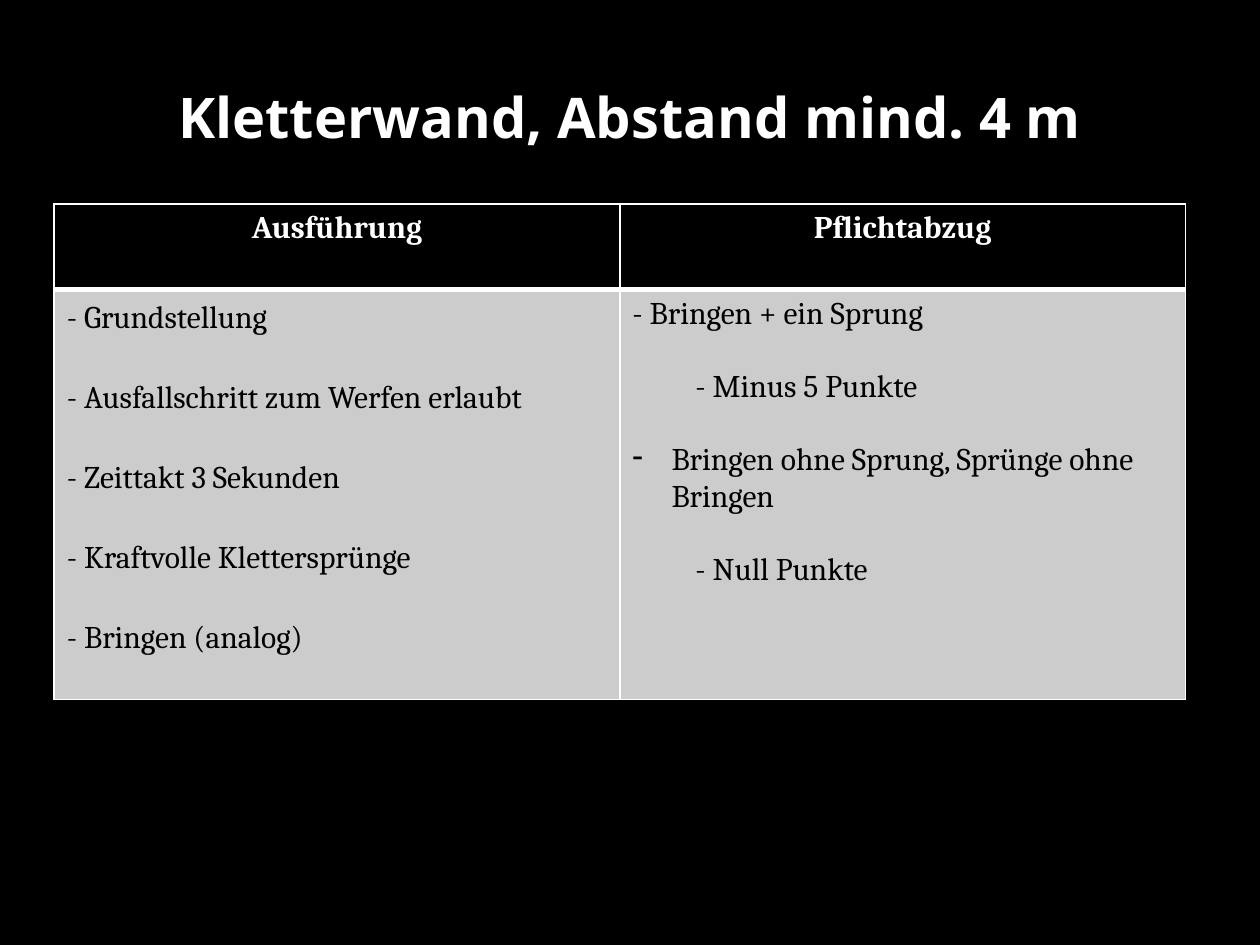
"""Build the climbing wall slide with its two-column rules table."""
from lxml import etree
from pptx import Presentation, util as u
from pptx.dml.color import RGBColor
from pptx.enum import text
from pptx.oxml.ns import qn

BLACK = RGBColor(0, 0, 0)
WHITE = RGBColor(255, 255, 255)
GREY = RGBColor(0xCC, 0xCC, 0xCC)

TITLE = "Kletterwand, Abstand mind. 4 m"
PLAIN, INDENTED, BULLET = (0, 0), (0.5, 0), (0.31, -0.31)
COLUMNS = [
    {"heading": "Ausführung", "line_spacing": 1.1, "gap": 23, "items": [
        ("- Grundstellung", PLAIN),
        ("- Ausfallschritt zum Werfen erlaubt", PLAIN),
        ("- Zeittakt 3 Sekunden", PLAIN),
        ("- Kraftvolle Klettersprünge", PLAIN),
        ("- Bringen (analog)", PLAIN)]},
    {"heading": "Pflichtabzug", "line_spacing": 1.0, "gap": 21, "items": [
        ("- Bringen + ein Sprung", PLAIN),
        ("- Minus 5 Punkte", INDENTED),
        ("Bringen ohne Sprung, Sprünge ohne Bringen", BULLET),
        ("- Null Punkte", INDENTED)]},
]
LEFT, TOP, COLUMN_WIDTH = 0.43, 1.62, 4.49
ROW_HEIGHTS = (0.68, 3.25)


def style(paragraph, font, size, color, bold):
    for run in paragraph.runs:
        run.font.name = font
        run.font.size = u.Pt(size)
        run.font.bold = bold
        run.font.color.rgb = color


def paint(cell, fill, bottom_width):
    cell.fill.solid()
    cell.fill.fore_color.rgb = fill
    properties = cell._tc.get_or_add_tcPr()
    widths = {"a:lnL": 1, "a:lnR": 1, "a:lnT": 1, "a:lnB": bottom_width}
    for position, (side, width) in enumerate(widths.items()):
        border = etree.Element(qn(side), w=str(u.Pt(width)))
        solid = etree.SubElement(border, qn("a:solidFill"))
        etree.SubElement(solid, qn("a:srgbClr"), val=str(WHITE))
        properties.insert(position, border)


def indent(paragraph, layout):
    margin, first_line = layout
    properties = paragraph._p.get_or_add_pPr()
    properties.set("marL", str(u.Inches(margin)))
    properties.set("indent", str(u.Inches(first_line)))
    if layout == BULLET:
        etree.SubElement(properties, qn("a:buChar"), char="-")


def fill_column(heading_cell, items_cell, column):
    paint(heading_cell, BLACK, 3)
    heading_cell.text_frame.text = column["heading"]
    heading = heading_cell.text_frame.paragraphs[0]
    heading.alignment = text.PP_ALIGN.CENTER
    style(heading, "Cambria", 18, WHITE, True)

    paint(items_cell, GREY, 1)
    frame = items_cell.text_frame
    frame.text = "\n".join(item for item, _ in column["items"])
    for index, (paragraph, (_, layout)) in enumerate(zip(frame.paragraphs, column["items"])):
        paragraph.line_spacing = column["line_spacing"]
        paragraph.space_before = u.Pt(column["gap"] if index else 0)
        indent(paragraph, layout)
        style(paragraph, "Cambria", 18, BLACK, False)


def main():
    deck = Presentation()
    deck.slide_width, deck.slide_height = u.Inches(10), u.Inches(7.5)
    slide = deck.slides.add_slide(deck.slide_layouts[6])
    slide.background.fill.solid()
    slide.background.fill.fore_color.rgb = BLACK

    title = slide.shapes.add_textbox(u.Inches(0.5), u.Inches(0.3), u.Inches(9), u.Inches(1.25)).text_frame
    title.word_wrap = True
    title.vertical_anchor = text.MSO_ANCHOR.MIDDLE
    title.text = TITLE
    title.paragraphs[0].alignment = text.PP_ALIGN.CENTER
    style(title.paragraphs[0], "Noto Sans", 32, WHITE, True)

    rules = slide.shapes.add_table(
        len(ROW_HEIGHTS), len(COLUMNS), u.Inches(LEFT), u.Inches(TOP),
        u.Inches(COLUMN_WIDTH * len(COLUMNS)), u.Inches(sum(ROW_HEIGHTS))).table
    for row, height in zip(rules.rows, ROW_HEIGHTS):
        row.height = u.Inches(height)
    for index, column in enumerate(COLUMNS):
        rules.columns[index].width = u.Inches(COLUMN_WIDTH)
        fill_column(rules.cell(0, index), rules.cell(1, index), column)

    deck.save("out.pptx")


if __name__ == "__main__":
    main()
